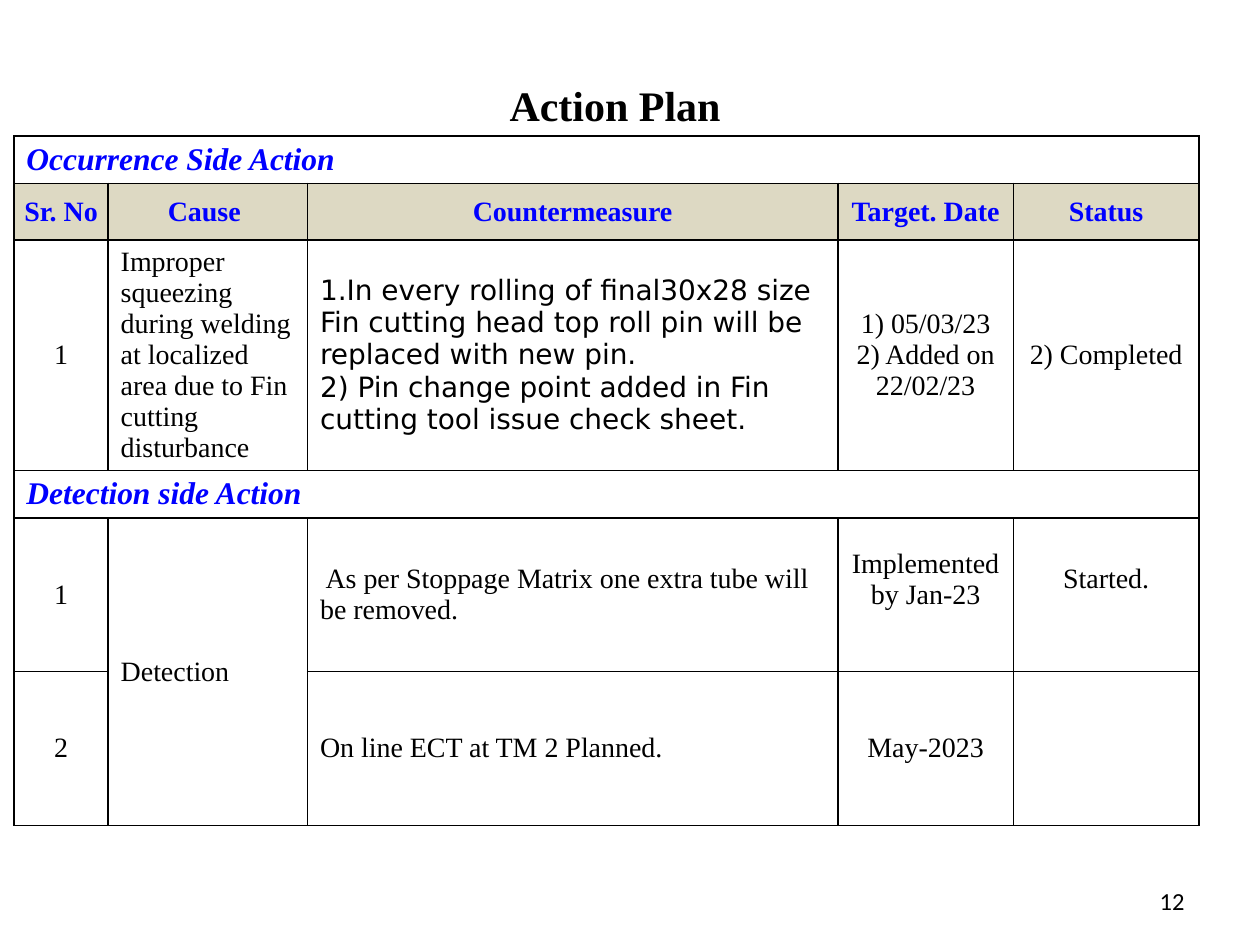
from lxml import etree
from pptx import Presentation
from pptx.dml.color import RGBColor
from pptx.enum import text
from pptx.oxml import ns
from pptx.util import Cm, Pt

COLORS = {"black": "000000", "blue": "0000FF", "header": "DDD9C3"}
LEFT, CENTER, RIGHT = text.PP_ALIGN.LEFT, text.PP_ALIGN.CENTER, text.PP_ALIGN.RIGHT
TOP, MIDDLE, BOTTOM = text.MSO_ANCHOR.TOP, text.MSO_ANCHOR.MIDDLE, text.MSO_ANCHOR.BOTTOM
SERIF = "Times New Roman"

FORMATS = {
    "title": {"size": Pt(24), "name": SERIF, "bold": True, "italic": False},
    "section": {"size": Pt(18), "name": SERIF, "bold": True, "italic": True},
    "header": {"size": Pt(16), "name": SERIF, "bold": True, "italic": False},
    "body": {"size": Pt(16), "name": SERIF, "bold": False, "italic": False},
    "sans": {"size": Pt(16), "name": "DejaVu Sans", "bold": False, "italic": False},
    "number": {"size": Pt(14), "name": "Calibri", "bold": False, "italic": False},
}


def write(frame, lines, style, color, alignment):
    """Fill a text frame with one formatted paragraph per line."""
    for index, line in enumerate(lines):
        paragraph = frame.add_paragraph() if index else frame.paragraphs[0]
        paragraph.alignment = alignment
        run = paragraph.add_run()
        run.text = line
        for name, value in FORMATS[style].items():
            setattr(run.font, name, value)
        run.font.color.rgb = RGBColor.from_string(COLORS[color])


def add_borders(cell):
    """Draw a thin black line on all four sides of a cell."""
    properties = cell._tc.get_or_add_tcPr()
    for side in ("lnL", "lnR", "lnT", "lnB"):
        line = etree.SubElement(properties, ns.qn(f"a:{side}"), w=str(Pt(1)))
        fill = etree.SubElement(line, ns.qn("a:solidFill"))
        etree.SubElement(fill, ns.qn("a:srgbClr"), val=COLORS["black"])


presentation = Presentation()
presentation.slide_width, presentation.slide_height = Cm(25.4), Cm(19.05)
slide = presentation.slides.add_slide(presentation.slide_layouts[5])

# Title
title = slide.shapes.title
title.left, title.top, title.width, title.height = Cm(2.34), Cm(1.47), Cm(20.12), Cm(1.27)
title.text_frame.auto_size = text.MSO_AUTO_SIZE.NONE
title.text_frame.vertical_anchor = BOTTOM
write(title.text_frame, ["Action Plan"], "title", "black", CENTER)

# Table grid
column_widths = [1.9, 4.02, 10.69, 3.54, 3.74]
row_heights = [0.95, 1.14, 3.28, 0.92, 3.1, 3.1]
table = slide.shapes.add_table(
    len(row_heights), len(column_widths),
    Cm(0.28), Cm(2.74), Cm(sum(column_widths)), Cm(sum(row_heights)),
).table
table.first_row = table.horz_banding = False
for column, width in zip(table.columns, column_widths):
    column.width = Cm(width)
for row, height in zip(table.rows, row_heights):
    row.height = Cm(height)

# Table contents: None marks a cell covered by a merge or left empty
rows = [
    ["Occurrence Side Action", None, None, None, None],
    ["Sr. No", "Cause ", "Countermeasure", "Target. Date", "Status"],
    ["1",
     "Improper squeezing during welding at localized area due to Fin cutting disturbance",
     "1.In every rolling of final30x28 size Fin cutting head top roll pin will be "
     "replaced with new pin.\n"
     "2) Pin change point added in Fin cutting tool issue check sheet.",
     "1) 05/03/23\n2) Added on 22/02/23",
     "2) Completed"],
    ["Detection side Action", None, None, None, None],
    ["1", "Detection", " As per Stoppage Matrix one extra tube will be removed.",
     "Implemented by Jan-23", "Started."],
    ["2", None, "On line ECT at TM 2 Planned.", "May-2023", None],
]
section_rows, header_row = (0, 3), 1
left_columns = (1, 2)

for row_index, values in enumerate(rows):
    for column_index, value in enumerate(values):
        cell = table.cell(row_index, column_index)
        add_borders(cell)
        cell.fill.background()
        cell.vertical_anchor = MIDDLE
        style, color = "body", "black"
        alignment = LEFT if column_index in left_columns else CENTER
        if row_index in section_rows:
            style, color, alignment = "section", "blue", LEFT
            cell.vertical_anchor = TOP
        elif row_index == header_row:
            style, color, alignment = "header", "blue", CENTER
            cell.fill.solid()
            cell.fill.fore_color.rgb = RGBColor.from_string(COLORS["header"])
            for side in ("left", "right", "top", "bottom"):
                setattr(cell, f"margin_{side}", Cm(0.1))
        elif (row_index, column_index) == (2, 2):
            style = "sans"
        if value:
            write(cell.text_frame, value.split("\n"), style, color, alignment)

# The first detection date and status sit a little above the middle
for column_index in (3, 4):
    table.cell(4, column_index).margin_bottom = Cm(0.75)

# Merged cells
for row_index in section_rows:
    table.cell(row_index, 0).merge(table.cell(row_index, 4))
table.cell(4, 1).merge(table.cell(5, 1))

# Page number
number = slide.shapes.add_textbox(Cm(18.21), Cm(17.65), Cm(5.92), Cm(1.02))
number.text_frame.word_wrap = True
number.text_frame.vertical_anchor = MIDDLE
write(number.text_frame, ["12"], "number", "black", RIGHT)

presentation.save("out.pptx")
